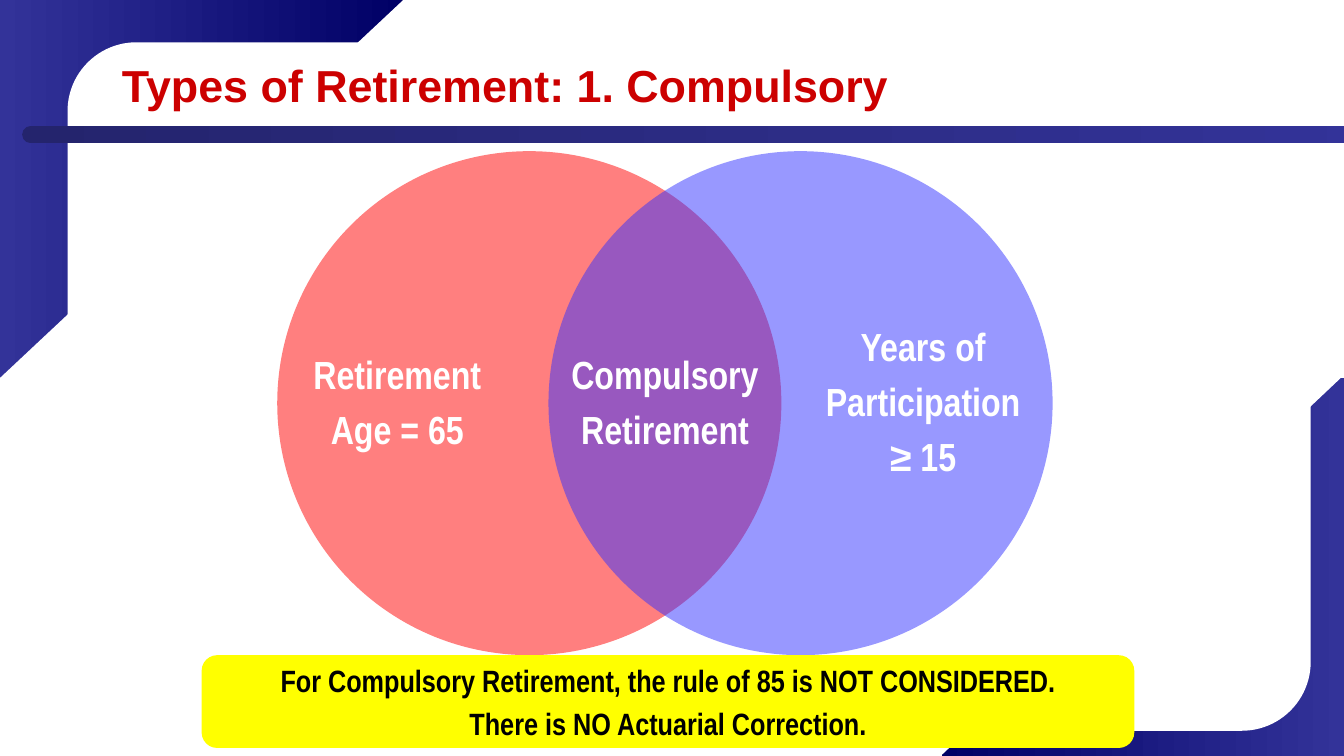
from lxml import etree
from pptx import Presentation
from pptx.dml.color import RGBColor
from pptx.enum.shapes import MSO_SHAPE
from pptx.enum.text import MSO_ANCHOR, MSO_AUTO_SIZE, PP_ALIGN
from pptx.oxml.ns import qn
from pptx.util import Inches, Pt

RECT, OVAL = MSO_SHAPE.RECTANGLE, MSO_SHAPE.OVAL
ROUNDED, TRIANGLE = MSO_SHAPE.ROUNDED_RECTANGLE, MSO_SHAPE.RIGHT_TRIANGLE
LEFT, CENTER = PP_ALIGN.LEFT, PP_ALIGN.CENTER
MIDDLE, TOP = MSO_ANCHOR.MIDDLE, MSO_ANCHOR.TOP
FIT_SHAPE, NO_FIT = MSO_AUTO_SIZE.SHAPE_TO_FIT_TEXT, MSO_AUTO_SIZE.NONE

WHITE = RGBColor(0xFF, 0xFF, 0xFF)
BLACK = RGBColor(0x00, 0x00, 0x00)
RED = RGBColor(0xFF, 0x00, 0x00)
TITLE_RED = RGBColor(0xCC, 0x00, 0x00)
YELLOW = RGBColor(0xFF, 0xFF, 0x00)
BLUE = RGBColor(0x33, 0x33, 0xFF)
NAVY = RGBColor(0x00, 0x00, 0x66)
INDIGO = RGBColor(0x33, 0x33, 0x99)
DUSK = RGBColor(0x24, 0x24, 0x6D)


class SlideBuilder:
    title_font = "Arial"
    body_font = "Arial Narrow"

    def __init__(self, deck):
        self.page = deck.slides.add_slide(deck.slide_layouts[5])

    def shape(self, kind, at, colors, round_by=None, flip=None, alpha=None, parent=None):
        """Add a borderless shape; two colors make a left-to-right gradient."""
        shapes = (parent or self.page).shapes
        box = shapes.add_shape(kind, *map(Inches, at))
        box.shadow.inherit = False
        box.line.fill.background()
        if len(colors) == 2:
            box.fill.gradient()
            box.fill.gradient_angle = 0
            for stop, color, position in zip(box.fill.gradient_stops, colors, (0, 1)):
                stop.color.rgb = color
                stop.position = position
        else:
            box.fill.solid()
            box.fill.fore_color.rgb = colors[0]
        if round_by is not None:
            box.adjustments[0] = round_by
        if flip:
            box._element.spPr.find(qn("a:xfrm")).set(flip, "1")
        if alpha:
            color_node = box._element.spPr.find(qn("a:solidFill"))[0]
            etree.SubElement(color_node, qn("a:alpha")).set("val", str(alpha * 1000))
        return box

    def set_lines(self, box, lines, size, color, anchor=TOP):
        """Fill a shape with centred bold lines, spaced by 20% of a line."""
        box.text_frame.text = "\n".join(lines)
        box.text_frame.vertical_anchor = anchor
        for para in box.text_frame.paragraphs:
            para.alignment = CENTER
            para.space_before = Pt(0)
            spacing = para._p.pPr.find(qn("a:spcBef"))
            spacing.remove(spacing[0])
            etree.SubElement(spacing, qn("a:spcPct")).set("val", "20000")
            self.font(para, self.body_font, size, color)

    def font(self, para, name, size, color):
        para.font.name = name
        para.font.size = Pt(size)
        para.font.bold = True
        para.font.color.rgb = color

    def label(self, at, lines, wrap=False, parent=None):
        box = (parent or self.page).shapes.add_textbox(*map(Inches, at))
        self.set_lines(box, lines, 28, WHITE)
        box.text_frame.word_wrap = wrap
        box.text_frame.auto_size = FIT_SHAPE

    def circle(self, left, color, label_at, lines):
        group = self.page.shapes.add_group_shape()
        self.shape(OVAL, (left, 1.5, 5, 5), [color], alpha=50, parent=group)
        self.label(label_at, lines, parent=group)

    def title(self, at, text):
        box = self.page.shapes.title
        box.left, box.top, box.width, box.height = map(Inches, at)
        box.text_frame.text = text
        box.text_frame.vertical_anchor = MIDDLE
        box.text_frame.auto_size = NO_FIT
        para = box.text_frame.paragraphs[0]
        para.alignment = LEFT
        self.font(para, self.title_font, 32, TITLE_RED)
        # Bring the title in front of the frame
        self.page.shapes._spTree.append(box._element)


def main():
    deck = Presentation()
    deck.slide_width, deck.slide_height = Inches(13.33), Inches(7.5)
    slide = SlideBuilder(deck)

    # Corner frame
    slide.shape(RECT, (9.34, 3.75, 3.99, 3.75), [NAVY, INDIGO])
    slide.shape(TRIANGLE, (9.33, 3.72, 4, 3.78), [WHITE], flip="flipV")
    slide.shape(RECT, (0, 0, 4, 3.75), [INDIGO, NAVY])
    slide.shape(TRIANGLE, (0, 0, 4, 3.75), [WHITE], flip="flipH")
    slide.shape(RECT, (0, 3.75, 4.11, 3.75), [WHITE])
    slide.shape(RECT, (9.22, 0, 4.11, 3.75), [WHITE])
    slide.shape(ROUNDED, (0.67, 0.42, 12.33, 6.83), [WHITE], round_by=0.1)

    # Title and its rule
    slide.shape(ROUNDED, (0.22, 1.25, 13.56, 0.17), [DUSK, INDIGO], round_by=0.5)
    slide.title((1.11, 0.5, 11.56, 0.67), "Types of Retirement: 1. Compulsory")

    # Overlapping conditions
    slide.circle(2.75, RED, (3, 3.43, 1.88, 1.14), ["Retirement", "Age = 65"])
    slide.circle(5.44, BLUE, (8.08, 3.15, 2.15, 1.7),
                 ["Years of", "Participation", "≥ 15"])
    slide.label((5.44, 3.43, 2.31, 1.14), ["Compulsory", "Retirement"], wrap=True)

    # Note
    note = slide.shape(ROUNDED, (2, 6.5, 9.25, 0.92), [YELLOW])
    slide.set_lines(note, ["For Compulsory Retirement, the rule of 85 is NOT CONSIDERED.",
                           "There is NO Actuarial Correction."], 22, BLACK, MIDDLE)

    deck.save("out.pptx")


if __name__ == "__main__":
    main()
